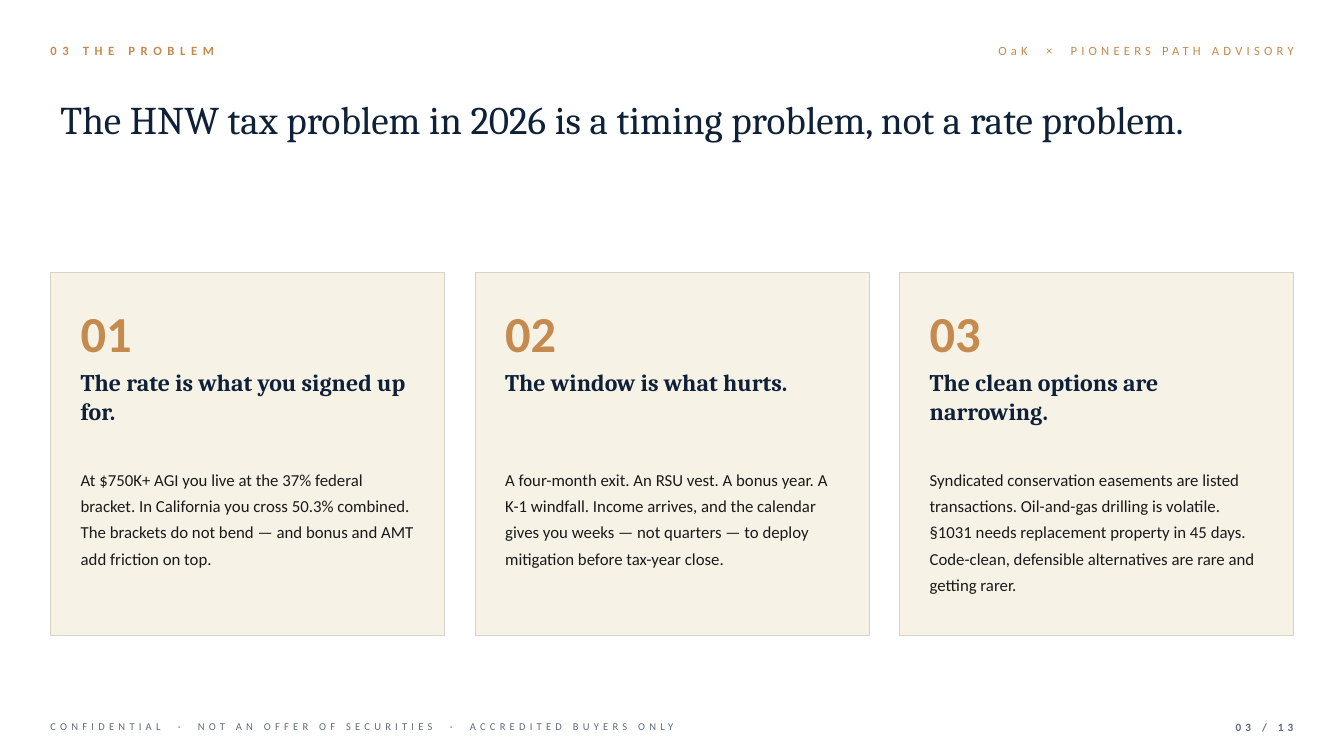
from pptx import Presentation
from pptx.dml.color import RGBColor
from pptx.enum import shapes, text
from pptx.util import Inches, Pt

NAVY = RGBColor(0x0E, 0x21, 0x38)
COPPER = RGBColor(0xC5, 0x8A, 0x4E)
CREAM = RGBColor(0xF7, 0xF2, 0xE6)
SAND = RGBColor(0xD9, 0xD2, 0xC7)
INK = RGBColor(0x1A, 0x1A, 0x1A)
SLATE = RGBColor(0x5D, 0x6B, 0x7C)
WIDE, HIGH = 13.33, 7.5
EDGE, GAP, PAD = 0.5, 0.3, 0.3
SPAN = WIDE - 2 * EDGE
LEFT, RIGHT = text.PP_ALIGN.LEFT, text.PP_ALIGN.RIGHT
TOP, MID = text.MSO_ANCHOR.TOP, text.MSO_ANCHOR.MIDDLE
CARDS = [
    ("01", "The rate is what you signed up for.",
     "At $750K+ AGI you live at the 37% federal bracket. In California you cross "
     "50.3% combined. The brackets do not bend — and bonus and AMT add friction on top."),
    ("02", "The window is what hurts.",
     "A four-month exit. An RSU vest. A bonus year. A K-1 windfall. Income arrives, "
     "and the calendar gives you weeks — not quarters — to deploy mitigation before "
     "tax-year close."),
    ("03", "The clean options are narrowing.",
     "Syndicated conservation easements are listed transactions. Oil-and-gas drilling "
     "is volatile. §1031 needs replacement property in 45 days. Code-clean, defensible "
     "alternatives are rare and getting rarer."),
]


def place(shape, box):
    """Move a shape to a box given in inches."""
    shape.left, shape.top, shape.width, shape.height = (Inches(n) for n in box)


def write(shape, words, size, color, font="Calibri", bold=False, align=LEFT,
          anchor=TOP, track=0, lead=None):
    """Fill a shape with one paragraph; words is a string or (string, tracking) runs."""
    frame = shape.text_frame
    frame.word_wrap = True
    frame.auto_size = text.MSO_AUTO_SIZE.NONE
    frame.vertical_anchor = anchor
    frame.margin_left = frame.margin_top = frame.margin_right = frame.margin_bottom = 0
    para = frame.paragraphs[0]
    para.alignment = align
    if lead:
        para.line_spacing = lead
    for part, space in [(words, track)] if isinstance(words, str) else words:
        run = para.add_run()
        run.text = part
        run.font.size, run.font.name, run.font.bold = Pt(size), font, bold
        run.font.color.rgb = color
        if space:
            run.font._element.set("spc", str(round(space * 100)))


def label(slide, box, words, size, color, **style):
    """Add a text box."""
    write(slide.shapes.add_textbox(*(Inches(n) for n in box)), words, size, color, **style)


def spread(parts, mark, track, wide):
    """Join parts by a mark with widely tracked spaces around it."""
    runs = [(parts[0], track)]
    for part in parts[1:]:
        runs += [(" ", wide), (mark, track), (" ", wide), (part, track)]
    return runs


def header(slide, box):
    """Place the section label, the firm names and the title."""
    x, y, w, h = box
    label(slide, (x, y, w / 2, 0.3), "03 THE PROBLEM", 9, COPPER,
          bold=True, anchor=MID, track=4)
    firms = spread(["OaK", "PIONEERS PATH ADVISORY"], "×", 3, 8)
    label(slide, (x + w / 2, y, w / 2, 0.3), firms, 9, COPPER,
          align=RIGHT, anchor=MID)
    title = slide.shapes.title
    place(title, (x + 0.1, y + 0.6, w - 0.2, h - 0.6))
    write(title, "The HNW tax problem in 2026 is a timing problem, not a rate problem.",
          28, NAVY, font="Cambria")


def card(slide, box, number, head, body):
    """Draw one card with its number, heading and body."""
    x, y, w, h = box
    panel = slide.shapes.add_shape(shapes.MSO_SHAPE.RECTANGLE, *(Inches(n) for n in box))
    panel.shadow.inherit = False
    panel.fill.solid()
    panel.fill.fore_color.rgb = CREAM
    panel.line.color.rgb = SAND
    panel.line.width = Pt(0.5)
    left, wide = x + PAD, w - 2 * PAD
    label(slide, (left, y + PAD, wide, 0.6), number, 36, COPPER, bold=True, anchor=MID)
    label(slide, (left, y + 0.95, wide, 0.9), head, 17, NAVY, font="Cambria", bold=True)
    label(slide, (left, y + 1.9, wide, h - 2.1), body, 12, INK, lead=1.3)


def row(slide, box):
    """Lay the cards out in equal columns."""
    x, y, w, h = box
    col = (w - GAP * (len(CARDS) - 1)) / len(CARDS)
    for i, words in enumerate(CARDS):
        card(slide, (x + i * (col + GAP), y, col, h), *words)


def footer(slide, box):
    """Place the notice and the page number."""
    x, y, w, h = box
    notice = spread(["CONFIDENTIAL", "NOT AN OFFER OF SECURITIES",
                     "ACCREDITED BUYERS ONLY"], "·", 3, 7.7)
    label(slide, (x, y, 9.5, h), notice, 7.5, SLATE, anchor=MID)
    label(slide, (x + w - 0.9, y, 0.9, h), "03 / 13", 8, SLATE,
          bold=True, align=RIGHT, anchor=MID, track=3)


def main():
    """Build and save the slide."""
    deck = Presentation()
    deck.slide_width, deck.slide_height = Inches(WIDE), Inches(HIGH)
    slide = deck.slides.add_slide(deck.slide_layouts[5])
    header(slide, (EDGE, 0.35, SPAN, 1.8))
    row(slide, (EDGE, 2.7, SPAN, 3.6))
    footer(slide, (EDGE, 7.1, SPAN, 0.22))
    deck.save("out.pptx")


if __name__ == "__main__":
    main()
